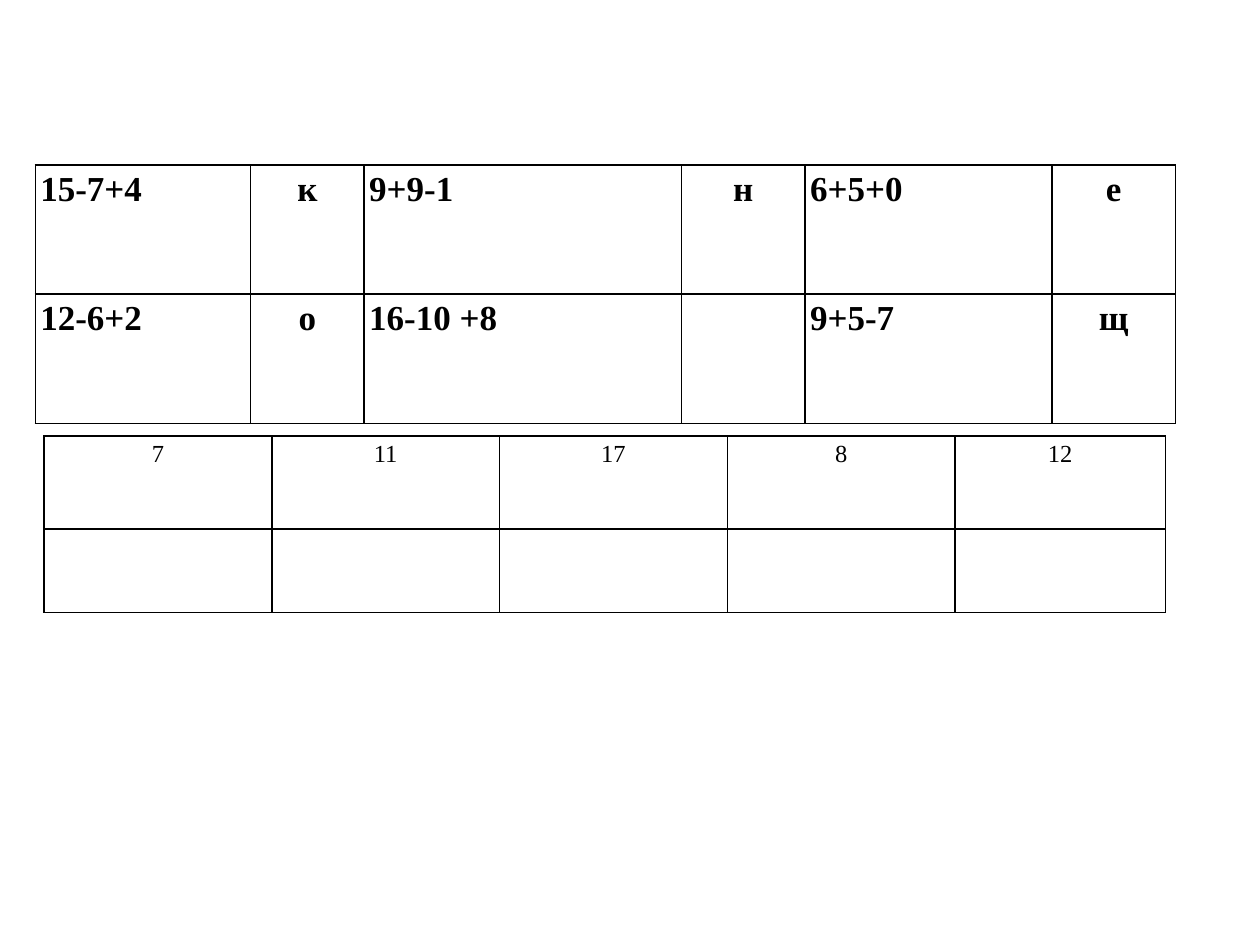
"""Build a slide with a table of sums and letters above an answer grid."""
import pptx
import pptx.dml.color
import pptx.enum.text
import pptx.oxml
import pptx.oxml.ns
import pptx.util

Inches = pptx.util.Inches
COLORS = {"ink": "000000"}
ALIGN = pptx.enum.text.PP_ALIGN


def add_border(cell, side):
    cell_properties = cell._tc.get_or_add_tcPr()
    cell_properties.append(pptx.oxml.parse_xml(
        f'<a:{side} {pptx.oxml.ns.nsdecls("a")} w="12700"><a:solidFill>'
        f'<a:srgbClr val="{COLORS["ink"]}"/></a:solidFill></a:{side}>'))


presentation = pptx.Presentation()
presentation.slide_width = Inches(10)
presentation.slide_height = Inches(7.5)
slide = presentation.slides.add_slide(presentation.slide_layouts[6])

tables = [
    {
        "position": (0.28, 1.31),
        "columns": [1.71, 0.9, 2.52, 0.98, 1.96, 0.98],
        "rows": [2.05 / 2] * 2,
        "texts": [
            ["15-7+4", "к", "9+9-1", "н", "6+5+0", "е"],
            ["12-6+2", "о", "16-10 +8", "", "9+5-7", "щ"],
        ],
        "alignments": [ALIGN.LEFT, ALIGN.CENTER] * 3,
        "size": 20,
        "bold": True,
    },
    {
        "position": (0.35, 3.46),
        "columns": [7.23 / 4] * 4 + [1.67],
        "rows": [0.74, 0.66],
        "texts": [["7", "11", "17", "8", "12"], [""] * 5],
        "alignments": [ALIGN.CENTER] * 5,
        "size": 14,
        "bold": False,
    },
]

for data in tables:
    left, top = data["position"]
    shape = slide.shapes.add_table(
        len(data["rows"]), len(data["columns"]), Inches(left), Inches(top),
        Inches(sum(data["columns"])), Inches(sum(data["rows"])))
    table = shape.table
    table.first_row = False
    table.horz_banding = False
    for column, width in zip(table.columns, data["columns"]):
        column.width = Inches(width)
    for row, height, texts in zip(table.rows, data["rows"], data["texts"]):
        row.height = Inches(height)
        for cell, text, alignment in zip(row.cells, texts, data["alignments"]):
            cell.margin_left = cell.margin_right = Inches(0.04)
            cell.margin_top = cell.margin_bottom = Inches(0.04)
            for side in ("lnL", "lnR", "lnT", "lnB"):
                add_border(cell, side)
            cell.fill.background()
            if not text:
                continue
            cell.text = text
            paragraph = cell.text_frame.paragraphs[0]
            paragraph.alignment = alignment
            paragraph.font.name = "Times New Roman"
            paragraph.font.size = pptx.util.Pt(data["size"])
            paragraph.font.bold = data["bold"]
            paragraph.font.color.rgb = pptx.dml.color.RGBColor.from_string(COLORS["ink"])

presentation.save("out.pptx")
